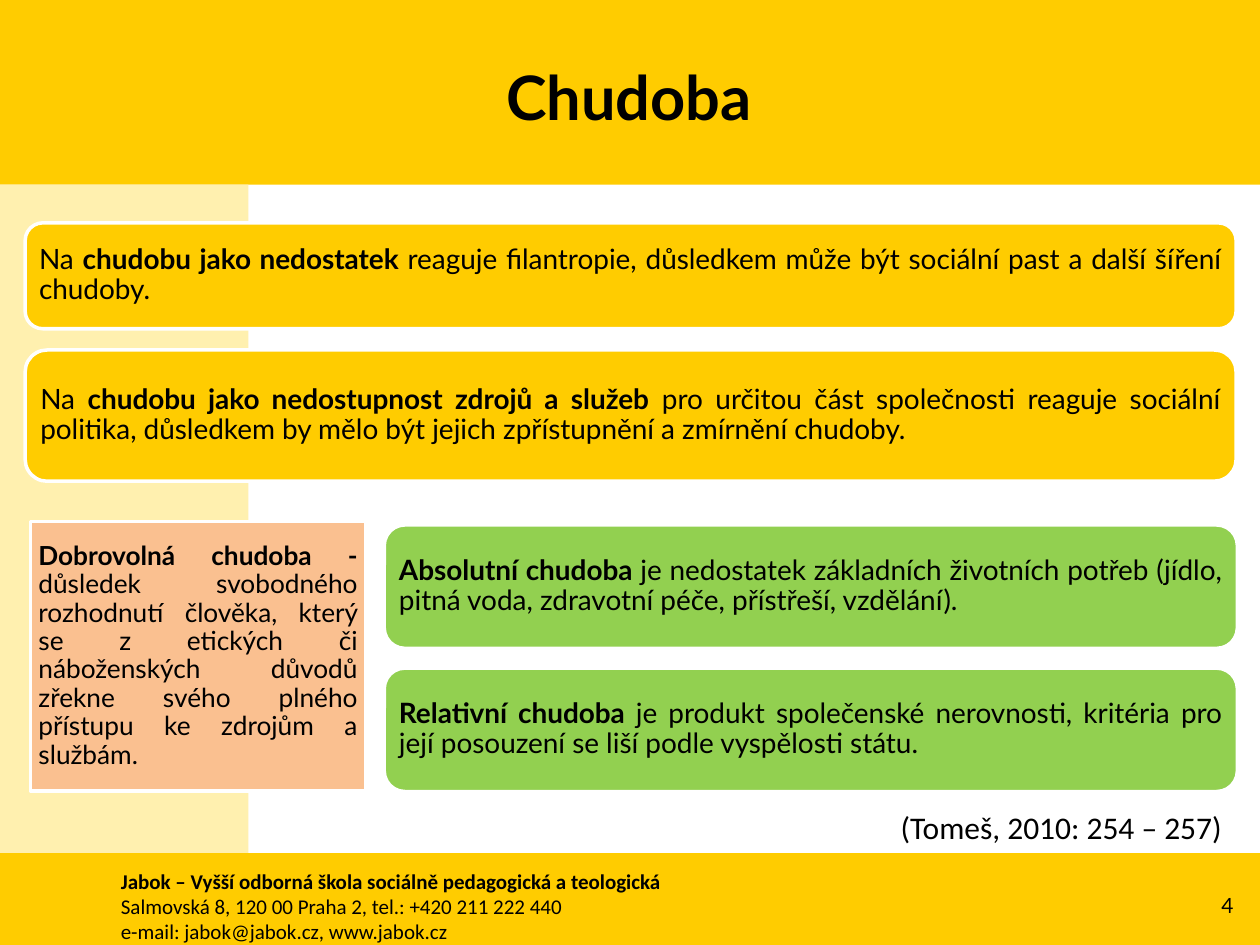
"""Build the slide on kinds of poverty."""
from dataclasses import dataclass

from pptx import Presentation
from pptx.dml.color import RGBColor
from pptx.enum.shapes import MSO_SHAPE
from pptx.enum.text import MSO_ANCHOR, PP_ALIGN
from pptx.util import Pt


@dataclass(frozen=True)
class Theme:
    gold: str = "FFCC00"
    cream: str = "FFF0AF"
    green: str = "92D050"
    peach: str = "FAC090"
    white: str = "FFFFFF"
    ink: str = "000000"
    head: str = "Lato"
    body: str = "Calibri"
    title: int = 35
    cite: int = 18
    card: int = 16
    side: int = 15
    small: int = 12


class Deck:
    def __init__(self, theme):
        self.theme = theme
        self.prs = Presentation()
        self.prs.slide_width, self.prs.slide_height = Pt(720), Pt(540)
        self.slide = self.prs.slides.add_slide(self.prs.slide_layouts[6])

    def style(self, font, size, face, bold=False):
        font.size, font.name, font.bold = Pt(size), face, bold
        font.color.rgb = RGBColor.from_string(self.theme.ink)

    def shape(self, kind, box, fill):
        item = self.slide.shapes.add_shape(kind, *map(Pt, box))
        item.shadow.inherit = False
        item.fill.solid()
        item.fill.fore_color.rgb = RGBColor.from_string(fill)
        return item

    def band(self, box, fill):
        self.shape(MSO_SHAPE.RECTANGLE, box, fill).line.fill.background()

    def card(self, box, fill, parts, size, pad=5, kind=MSO_SHAPE.ROUNDED_RECTANGLE):
        item = self.shape(kind, box, fill)
        item.line.color.rgb = RGBColor.from_string(self.theme.white)
        item.line.width = Pt(2)
        frame = item.text_frame
        frame.word_wrap = True
        frame.vertical_anchor = MSO_ANCHOR.MIDDLE
        frame.margin_left = frame.margin_right = Pt(pad)
        frame.margin_top = frame.margin_bottom = Pt(pad)
        para = frame.paragraphs[0]
        para.alignment = PP_ALIGN.JUSTIFY
        para.line_spacing = 0.9
        for text, bold in parts:
            run = para.add_run()
            run.text = text
            self.style(run.font, size, self.theme.head, bold)

    def text(self, box, lines, size, face, align, anchor=MSO_ANCHOR.TOP, bold=False):
        frame = self.slide.shapes.add_textbox(*map(Pt, box)).text_frame
        frame.word_wrap = True
        frame.vertical_anchor = anchor
        frame.text = lines
        for index, para in enumerate(frame.paragraphs):
            para.alignment = align
            for run in para.runs:
                self.style(run.font, size, face, bold and index == 0)

    def save(self):
        self.prs.save("out.pptx")


def main():
    theme = Theme()
    deck = Deck(theme)
    deck.band((0, 0, 720, 105.5), theme.gold)
    deck.band((0, 105.5, 142, 434.5), theme.cream)
    deck.band((0, 487.5, 720, 52.5), theme.gold)

    deck.text((31, 21, 657, 68), "Chudoba", theme.title, theme.head,
              PP_ALIGN.CENTER, MSO_ANCHOR.MIDDLE, True)
    deck.text((62, 492.5, 590, 51),
              "Jabok – Vyšší odborná škola sociálně pedagogická a teologická\n"
              "Salmovská 8, 120 00 Praha 2, tel.: +420 211 222 440\n"
              "e-mail: jabok@jabok.cz, www.jabok.cz",
              theme.small, theme.body, PP_ALIGN.LEFT, bold=True)
    deck.text((667, 502.5, 45, 29), "4", theme.small, theme.head,
              PP_ALIGN.RIGHT, MSO_ANCHOR.MIDDLE)

    cards = (
        ((14.4, 127.4, 692, 60.5), theme.gold, (
            ("Na ", False), ("chudobu jako nedostatek ", True),
            ("reaguje filantropie, důsledkem může být sociální past "
             "a další šíření chudoby.", False))),
        ((14.4, 200, 692, 75), theme.gold, (
            ("Na ", False), ("chudobu jako nedostupnost zdrojů a služeb ", True),
            ("pro určitou část společnosti reaguje sociální politika, důsledkem "
             "by mělo být jejich zpřístupnění a zmírnění chudoby.", False))),
        ((219.6, 300, 487.5, 70.5), theme.green, (
            ("Absolutní chudoba ", True),
            ("je nedostatek základních životních potřeb (jídlo, pitná voda, "
             "zdravotní péče, přístřeší, vzdělání).", False))),
        ((219.6, 381.8, 487.5, 70.5), theme.green, (
            ("Relativní chudoba ", True),
            ("je produkt společenské nerovnosti, kritéria pro její posouzení "
             "se liší podle vyspělosti státu.", False))),
    )
    for box, fill, parts in cards:
        deck.card(box, fill, parts, theme.card)

    deck.card((17.5, 298, 191.5, 154), theme.peach, (
        ("Dobrovolná chudoba - ", True),
        ("důsledek svobodného rozhodnutí člověka, který se z etických či "
         "náboženských důvodů zřekne svého plného přístupu ke zdrojům "
         "a službám.", False)), theme.side, 4.5, MSO_SHAPE.RECTANGLE)
    deck.text((490, 458, 215.5, 29), "(Tomeš, 2010: 254 – 257)", theme.cite,
              theme.body, PP_ALIGN.RIGHT)
    deck.save()


if __name__ == "__main__":
    main()
